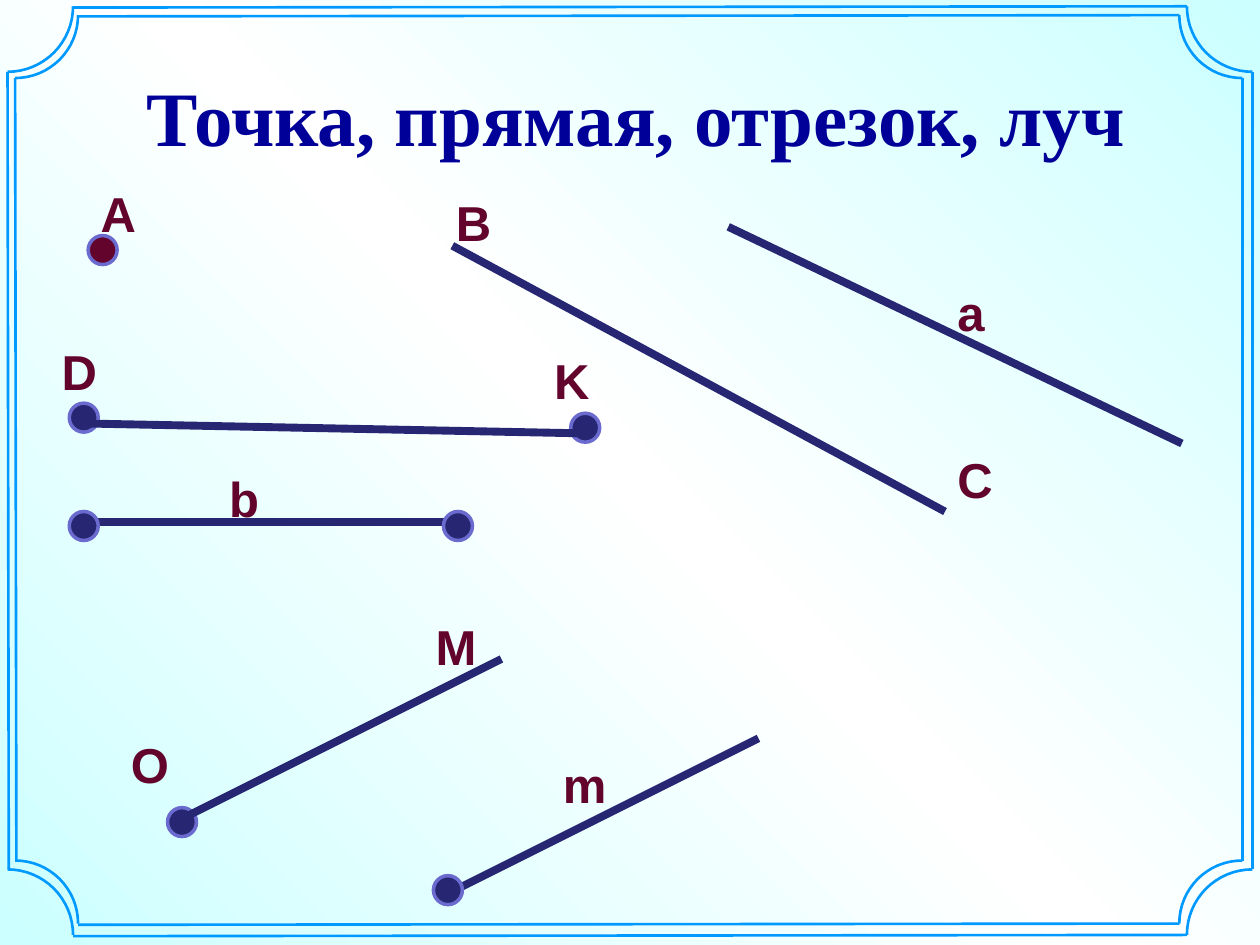
from copy import deepcopy
from math import cos, pi, sin

from lxml.etree import SubElement
from pptx import Presentation
from pptx.dml.color import RGBColor
from pptx.enum.shapes import MSO_CONNECTOR, MSO_SHAPE
from pptx.enum.text import MSO_ANCHOR, PP_ALIGN
from pptx.oxml.ns import qn
from pptx.util import Inches, Pt


class Theme:
    sky = RGBColor.from_string("CCFFFF")
    white = RGBColor.from_string("FFFFFF")
    frame = RGBColor.from_string("0099FF")
    title = RGBColor.from_string("000099")
    wine = RGBColor.from_string("62042C")
    navy = RGBColor.from_string("262673")
    rim = RGBColor.from_string("6B6BCF")
    title_font = {"name": "Times New Roman", "size": Pt(44), "bold": True}
    label_font = {"name": "Arial", "size": Pt(28), "bold": True}


def write(frame, text, font, color, align):
    frame.word_wrap = True
    frame.vertical_anchor = MSO_ANCHOR.TOP
    par = frame.paragraphs[0]
    par.alignment = align
    run = par.add_run()
    run.text = text
    for name, value in font.items():
        setattr(run.font, name, value)
    run.font.color.rgb = color


def stroke(line, color, width):
    line.color.rgb = color
    line.width = Pt(width)


deck = Presentation()
deck.slide_width, deck.slide_height = Inches(10), Inches(7.5)
slide = deck.slides.add_slide(deck.slide_layouts[5])
shapes = slide.shapes

# Background: sky at two opposite corners, white along the diagonal
back = slide.background.fill
back.gradient()
back.gradient_angle = 45
stops = slide.element.find(".//" + qn("a:gsLst"))
stops.insert(1, deepcopy(stops[0]))
for stop, place, color in zip(back.gradient_stops, (0, 0.5, 1),
                              (Theme.sky, Theme.white, Theme.sky)):
    stop.position = place
    stop.color.rgb = color

# Title
title = shapes.title
title.left, title.top = Inches(0.83), Inches(0.5)
title.width, title.height = Inches(8.44), Inches(0.84)
write(title.text_frame, "Точка, прямая, отрезок, луч",
      Theme.title_font, Theme.title, PP_ALIGN.CENTER)

# Dots: left, top, fill; the first group lies under the lines
size = Inches(0.23)
under = [(0.7, 1.87, Theme.wine), (0.55, 3.2, Theme.navy),
         (4.53, 3.28, Theme.navy), (1.33, 6.41, Theme.navy)]
over = [(3.52, 4.06, Theme.navy), (0.55, 4.06, Theme.navy),
        (3.44, 6.95, Theme.navy)]
lines = [
    (0.62, 3.36, 4.65, 3.44),  # segment DK
    (0.62, 4.14, 3.67, 4.14),  # segment b
    (3.59, 1.95, 7.5, 4.06),   # line BC
    (5.78, 1.8, 9.38, 3.52),   # line a
    (1.48, 6.48, 3.98, 5.23),  # ray OM
    (3.52, 7.11, 6.02, 5.86),  # ray m
]
for dots, rules in ((under, lines), (over, [])):
    for left, top, color in dots:
        dot = shapes.add_shape(MSO_SHAPE.OVAL, Inches(left), Inches(top),
                               size, size)
        dot.shadow.inherit = False
        dot.fill.solid()
        dot.fill.fore_color.rgb = color
        stroke(dot.line, Theme.rim, 2)
    for ends in rules:
        rule = shapes.add_connector(MSO_CONNECTOR.STRAIGHT,
                                    *map(Inches, ends))
        stroke(rule.line, Theme.navy, 4.5)
        SubElement(rule._element.spPr, qn("a:effectLst"))

# Labels: text, left, top, width
labels = [("А", 0.7, 1.41, 0.47), ("K", 4.3, 2.73, 0.47),
          ("D", 0.39, 2.66, 0.47), ("b", 1.72, 3.67, 0.47),
          ("С", 7.5, 3.52, 0.47), ("В", 3.52, 1.48, 0.47),
          ("а", 7.5, 2.19, 0.39), ("M", 3.36, 4.84, 0.47),
          ("O", 0.94, 5.78, 0.47), ("m", 4.37, 5.94, 0.47)]
for text, left, top, width in labels:
    box = shapes.add_textbox(Inches(left), Inches(top),
                             Inches(width), Inches(0.57))
    write(box.text_frame, text, Theme.label_font, Theme.wine, PP_ALIGN.LEFT)

# Double frame: four edges, then a scooped arc around each corner
tilt, steps = 0.01, 16
paths = []
for left, top, right, base, notch in ((0.12, 0.12, 9.86, 7.33, 0.5),
                                      (0.06, 0.05, 9.94, 7.42, 0.52)):
    for y in (top, base):
        paths.append([(right - notch, y), (left + notch, y + tilt)])
    for x, lean in ((left, tilt), (right, 0)):
        paths.append([(x + lean, base - notch), (x, top + notch)])
    for x, across in ((left, 1), (right, -1)):
        for y, down in ((top, 1), (base, -1)):
            turns = [pi / 2 * i / steps for i in range(steps + 1)]
            paths.append([(x + across * notch * cos(turn),
                           y + down * notch * sin(turn)) for turn in turns])

for path in paths:
    points = [(Inches(x), Inches(y)) for x, y in path]
    pen = shapes.build_freeform(*points[0])
    pen.add_line_segments(points[1:], close=False)
    piece = pen.convert_to_shape()
    piece.shadow.inherit = False
    piece.fill.background()
    stroke(piece.line, Theme.frame, 1.5)

deck.save("out.pptx")
